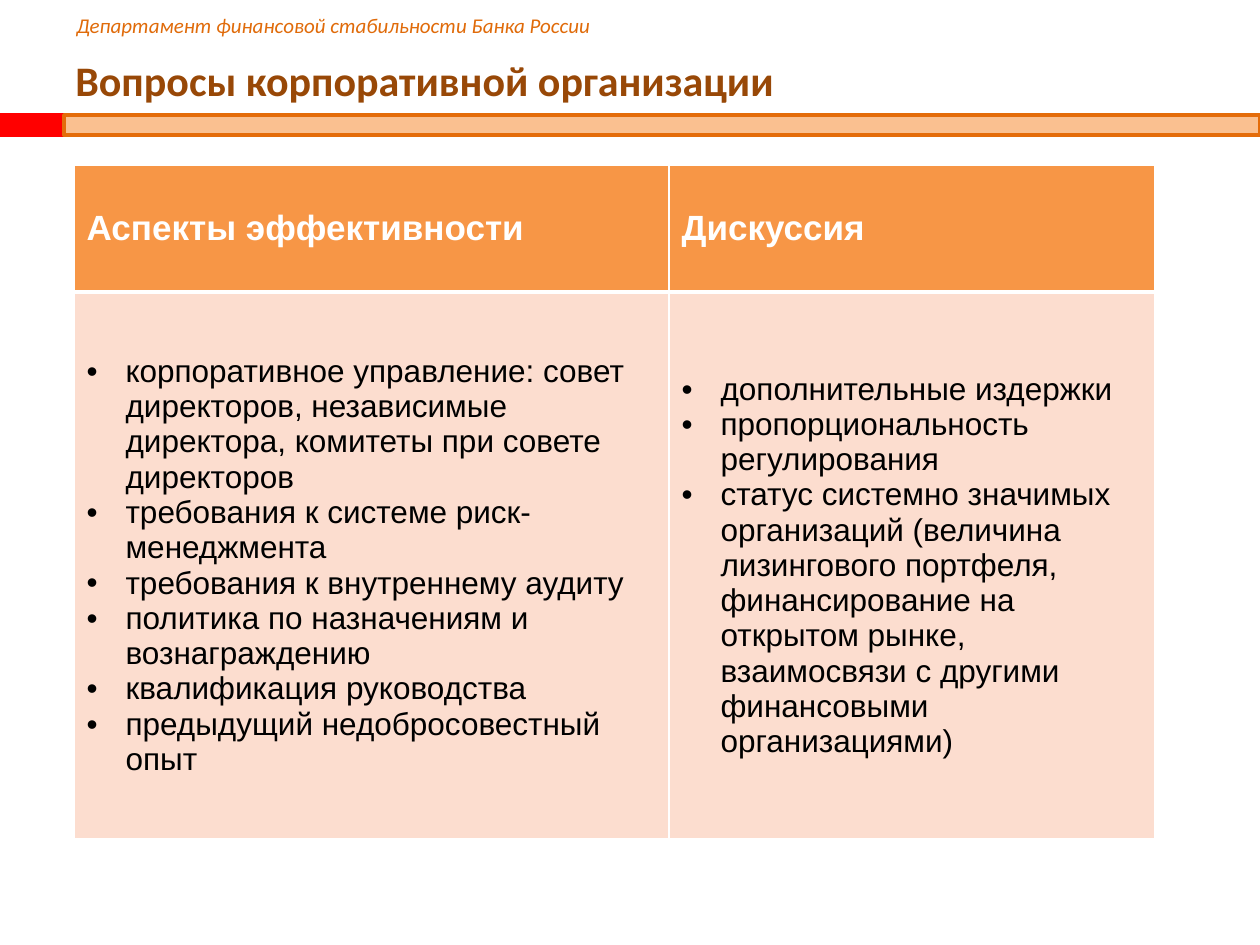
from lxml import etree
from pptx import Presentation
from pptx import util as u
from pptx.dml.color import RGBColor
from pptx.enum import shapes, text
from pptx.oxml.ns import qn

HEADINGS = [
    ("Департамент финансовой стабильности Банка России", (64, 6, 823, 38),
     dict(size=12, name="Calibri", color="E06B0A", italic=True)),
    ("Вопросы корпоративной организации", (63, 45, 1063, 70),
     dict(size=24, name="Calibri", color="984807", bold=True)),
]
BARS = [
    ((0, 115, 64, 20), "FF0000", "FF0000"),
    ((64, 115, 1196, 20), "FAC090", "E46C0A"),
]
COLUMNS = [
    ("Аспекты эффективности", 595, [
        "корпоративное управление: совет директоров, независимые директора, "
        "комитеты при совете директоров",
        "требования к системе риск-менеджмента",
        "требования к внутреннему аудиту",
        "политика по назначениям и вознаграждению",
        "квалификация руководства",
        "предыдущий недобросовестный опыт",
    ]),
    ("Дискуссия", 486, [
        "дополнительные издержки",
        "пропорциональность регулирования",
        "статус системно значимых организаций (величина лизингового портфеля, "
        "финансирование на открытом рынке, взаимосвязи с другими финансовыми "
        "организациями)",
    ]),
]
TABLE_LEFT, TABLE_TOP = 74, 165
ROW_HEIGHTS = [127, 547]
HEADER_STYLE = dict(size=20, name="Arial", color="FFFFFF", bold=True)
BODY_STYLE = dict(size=18, name="Arial", color="000000", bold=False)
HEADER_BORDERS = dict(lnL=1, lnR=1, lnT=1, lnB=3)
BODY_BORDERS = dict(lnL=1, lnR=1, lnT=3, lnB=1)
BULLET_INDENT = 39


def px(value):
    return u.Emu(round(value * 914400 / 126))


def rgb(value):
    return RGBColor.from_string(value)


def write(para, words, style):
    span = para.add_run()
    span.text = words
    for key, value in style.items():
        if key == "color":
            span.font.color.rgb = rgb(value)
        else:
            setattr(span.font, key, u.Pt(value) if key == "size" else value)


def add_bullet(para):
    properties = para._p.get_or_add_pPr()
    properties.set("marL", str(px(BULLET_INDENT)))
    properties.set("indent", str(-px(BULLET_INDENT)))
    etree.SubElement(properties, qn("a:buFont")).set("typeface", "Arial")
    etree.SubElement(properties, qn("a:buChar")).set("char", "•")


def add_borders(cell, borders):
    properties = cell._tc.get_or_add_tcPr()
    for position, (side, width) in enumerate(borders.items()):
        line = etree.Element(qn("a:" + side), w=str(u.Pt(width)))
        fill = etree.SubElement(line, qn("a:solidFill"))
        etree.SubElement(fill, qn("a:srgbClr")).set("val", "FFFFFF")
        properties.insert(position, line)


def fill_cell(cell, items, style, fill, borders, bulleted):
    cell.fill.solid()
    cell.fill.fore_color.rgb = rgb(fill)
    cell.vertical_anchor = text.MSO_ANCHOR.MIDDLE
    add_borders(cell, borders)
    frame = cell.text_frame
    for index, item in enumerate(items):
        para = frame.add_paragraph() if index else frame.paragraphs[0]
        if bulleted:
            add_bullet(para)
        write(para, item, style)


def add_bar(page, place, fill, line):
    bar = page.shapes.add_shape(shapes.MSO_SHAPE.RECTANGLE, *map(px, place))
    bar.shadow.inherit = False
    bar.fill.solid()
    bar.fill.fore_color.rgb = rgb(fill)
    bar.line.color.rgb = rgb(line)
    bar.line.width = u.Pt(2)


def add_heading(page, words, place, style):
    box = page.shapes.add_textbox(*map(px, place))
    box.text_frame.word_wrap = True
    box.text_frame.vertical_anchor = text.MSO_ANCHOR.MIDDLE
    write(box.text_frame.paragraphs[0], words, style)


def add_comparison(page):
    width = sum(column[1] for column in COLUMNS)
    table = page.shapes.add_table(
        len(ROW_HEIGHTS), len(COLUMNS),
        *map(px, (TABLE_LEFT, TABLE_TOP, width, sum(ROW_HEIGHTS)))).table
    for row, height in zip(table.rows, ROW_HEIGHTS):
        row.height = px(height)
    for index, (header, column_width, items) in enumerate(COLUMNS):
        table.columns[index].width = px(column_width)
        fill_cell(table.cell(0, index), [header], HEADER_STYLE,
                  "F79646", HEADER_BORDERS, False)
        fill_cell(table.cell(1, index), items, BODY_STYLE,
                  "FCDDCF", BODY_BORDERS, True)


def main():
    deck = Presentation()
    deck.slide_width, deck.slide_height = px(1260), px(945)
    page = deck.slides.add_slide(deck.slide_layouts[6])
    for bar in BARS:
        add_bar(page, *bar)
    for heading in HEADINGS:
        add_heading(page, *heading)
    add_comparison(page)
    deck.save("out.pptx")


if __name__ == "__main__":
    main()
